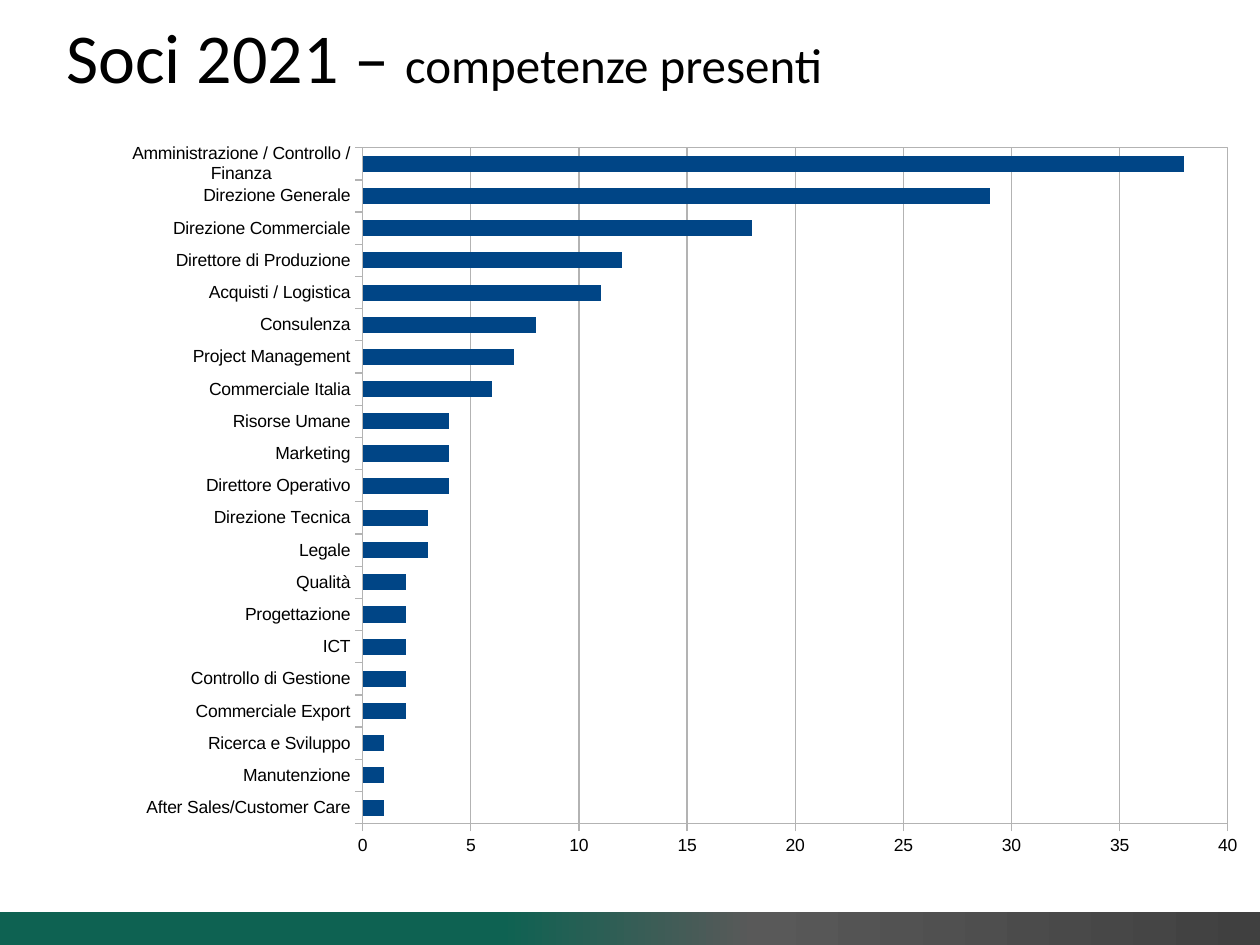
from dataclasses import dataclass

from lxml.etree import SubElement
from pptx import Presentation
from pptx.chart.data import CategoryChartData
from pptx.dml.color import RGBColor
from pptx.enum.chart import XL_CHART_TYPE, XL_TICK_LABEL_POSITION, XL_TICK_MARK
from pptx.enum.shapes import MSO_SHAPE
from pptx.enum.text import MSO_ANCHOR
from pptx.oxml import parse_xml
from pptx.oxml.ns import nsdecls, qn
from pptx.util import Cm, Pt


@dataclass(frozen=True)
class Theme:
    text: str = "000000"
    bar: str = "004586"
    rule: str = "B3B3B3"
    background: str = "FFFFFF"
    band: tuple = ((0, "404040"), (40, "595959"), (60, "0E6252"), (100, "0E6252"))
    title_font: str = "Calibri"
    chart_font: str = "Arial"
    title_size: float = 40
    subtitle_size: float = 28
    label_size: float = 10
    rule_width: float = 0.75


@dataclass(frozen=True)
class Box:
    left: float
    top: float
    width: float
    height: float

    def lengths(self) -> tuple:
        return tuple(Cm(v) for v in (self.left, self.top, self.width, self.height))


@dataclass(frozen=True)
class Skill:
    name: str
    members: int


THEME = Theme()
BAND_BOX = Box(-0.1, 18.39, 25.5, 0.69)
TITLE_BOX = Box(1.09, -0.48, 24.28, 3.18)
CHART_BOX = Box(2.21, 2.59, 23.19, 14.96)
PLOT_SHARE = {"x": 0.22, "y": 0.026, "w": 0.752, "h": 0.911}

# Skills from the most to the least common
SKILLS = (
    Skill("Amministrazione / Controllo / Finanza", 38),
    Skill("Direzione Generale", 29),
    Skill("Direzione Commerciale", 18),
    Skill("Direttore di Produzione", 12),
    Skill("Acquisti / Logistica", 11),
    Skill("Consulenza", 8),
    Skill("Project Management", 7),
    Skill("Commerciale Italia", 6),
    Skill("Risorse Umane", 4),
    Skill("Marketing", 4),
    Skill("Direttore Operativo", 4),
    Skill("Direzione Tecnica", 3),
    Skill("Legale", 3),
    Skill("Qualità", 2),
    Skill("Progettazione", 2),
    Skill("ICT", 2),
    Skill("Controllo di Gestione", 2),
    Skill("Commerciale Export", 2),
    Skill("Ricerca e Sviluppo", 1),
    Skill("Manutenzione", 1),
    Skill("After Sales/Customer Care", 1),
)


def rgb(value: str) -> RGBColor:
    return RGBColor.from_string(value)


def style_font(font, name: str, size: float) -> None:
    font.name = name
    font.size = Pt(size)
    font.color.rgb = rgb(THEME.text)


def style_rule(line) -> None:
    line.color.rgb = rgb(THEME.rule)
    line.width = Pt(THEME.rule_width)


def add_band(slide) -> None:
    band = slide.shapes.add_shape(MSO_SHAPE.RECTANGLE, *BAND_BOX.lengths())
    band.shadow.inherit = False
    band.line.fill.background()
    band.fill.gradient()
    band.fill.gradient_angle = 180
    # Four colour stops need XML
    stops = band.element.spPr.find(qn("a:gradFill")).find(qn("a:gsLst"))
    for stop in list(stops):
        stops.remove(stop)
    for percent, color in THEME.band:
        stop = SubElement(stops, qn("a:gs"), pos=str(percent * 1000))
        SubElement(stop, qn("a:srgbClr"), val=color)


def add_title(slide) -> None:
    frame = slide.shapes.add_textbox(*TITLE_BOX.lengths()).text_frame
    frame.word_wrap = True
    frame.vertical_anchor = MSO_ANCHOR.MIDDLE
    paragraph = frame.paragraphs[0]
    for wording, size in (("Soci 2021 – ", THEME.title_size),
                          ("competenze presenti", THEME.subtitle_size)):
        run = paragraph.add_run()
        run.text = wording
        style_font(run.font, THEME.title_font, size)


def style_axis(axis) -> None:
    axis.major_tick_mark = XL_TICK_MARK.OUTSIDE
    axis.minor_tick_mark = XL_TICK_MARK.NONE
    axis.tick_label_position = XL_TICK_LABEL_POSITION.LOW
    style_font(axis.tick_labels.font, THEME.chart_font, THEME.label_size)
    style_rule(axis.format.line)


def frame_plot(chart) -> None:
    """Place the plot area, outline it and give the chart its background."""
    plot_area = chart.element.chart.plotArea
    for layout in plot_area.findall(qn("c:layout")):
        plot_area.remove(layout)
    modes = "".join(f'<c:{side}Mode val="edge"/>' for side in "xy")
    shares = "".join(f'<c:{key} val="{share}"/>' for key, share in PLOT_SHARE.items())
    plot_area.insert(0, parse_xml(
        f'<c:layout {nsdecls("c")}><c:manualLayout><c:layoutTarget val="inner"/>'
        f'{modes}{shares}</c:manualLayout></c:layout>'))
    plot_area.append(parse_xml(
        f'<c:spPr {nsdecls("c", "a")}><a:noFill/><a:ln w="{Pt(THEME.rule_width)}">'
        f'<a:solidFill><a:srgbClr val="{THEME.rule}"/></a:solidFill></a:ln></c:spPr>'))
    chart.element.chart.addnext(parse_xml(
        f'<c:spPr {nsdecls("c", "a")}><a:solidFill><a:srgbClr val="{THEME.background}"/>'
        f'</a:solidFill><a:ln><a:noFill/></a:ln></c:spPr>'))


def add_skills_chart(slide) -> None:
    # Bars are stacked from the bottom up, so the rarest skill comes first
    ascending = SKILLS[::-1]
    skill_data = CategoryChartData()
    skill_data.categories = [skill.name for skill in ascending]
    skill_data.add_series("Series 1", [skill.members for skill in ascending])
    chart = slide.shapes.add_chart(
        XL_CHART_TYPE.BAR_STACKED, *CHART_BOX.lengths(), skill_data).chart
    chart.has_legend = False
    chart.has_title = False
    style_font(chart.font, THEME.title_font, THEME.label_size)

    # Bars
    bars = chart.plots[0]
    bars.gap_width = 100
    bars.overlap = 100
    bars.vary_by_categories = False
    members = bars.series[0]
    members.format.fill.solid()
    members.format.fill.fore_color.rgb = rgb(THEME.bar)

    # Axes
    style_axis(chart.category_axis)
    style_axis(chart.value_axis)
    chart.value_axis.minimum_scale = 0
    chart.value_axis.maximum_scale = 40
    chart.value_axis.major_unit = 5
    chart.value_axis.has_major_gridlines = True
    style_rule(chart.value_axis.major_gridlines.format.line)
    frame_plot(chart)


def main() -> None:
    deck = Presentation()
    deck.slide_width, deck.slide_height = Cm(25.4), Cm(19.05)
    slide = deck.slides.add_slide(deck.slide_layouts[6])
    add_band(slide)
    add_title(slide)
    add_skills_chart(slide)
    deck.save("out.pptx")


if __name__ == "__main__":
    main()
